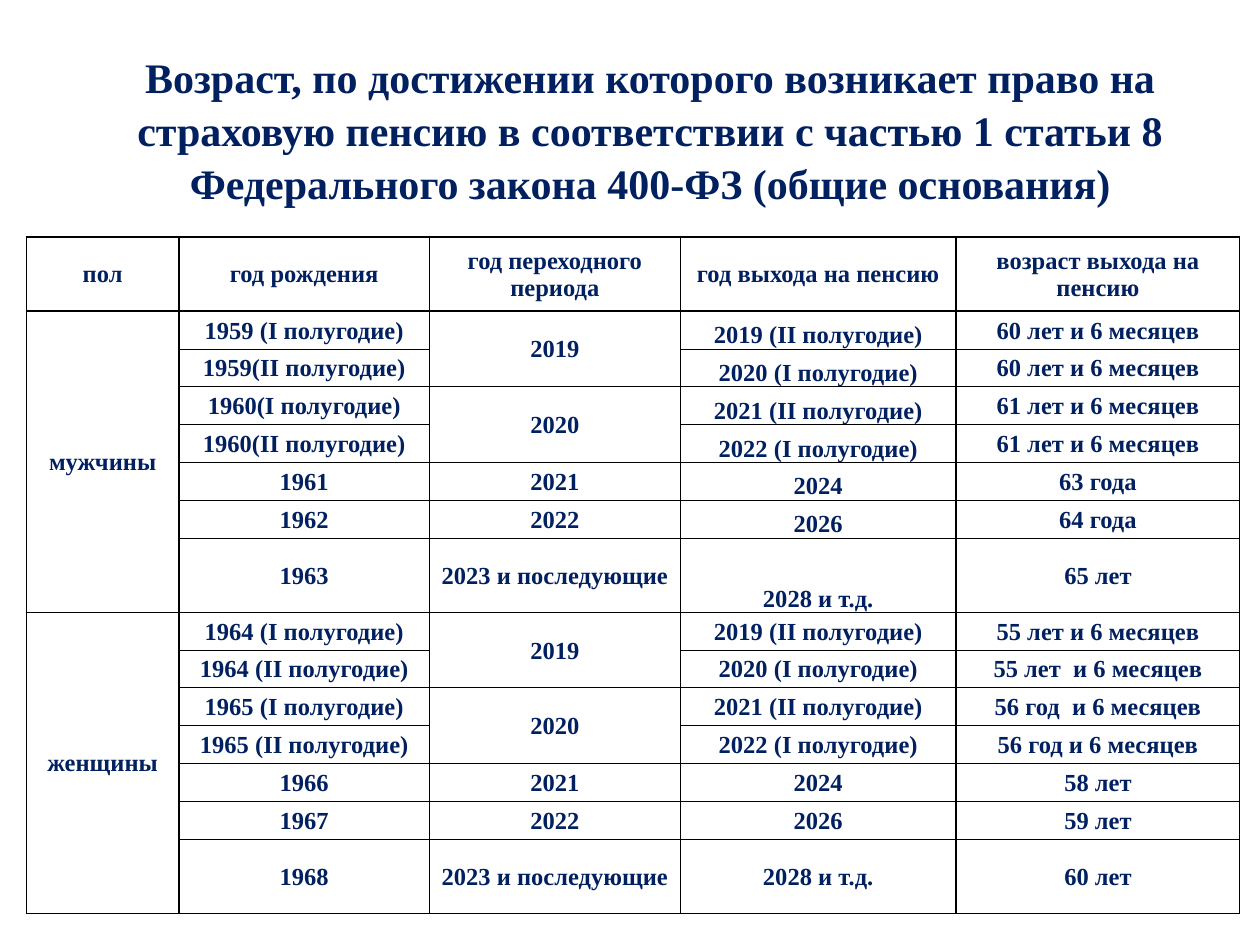
from lxml import etree
from pptx import Presentation
from pptx.dml.color import RGBColor
from pptx.enum import text
from pptx.oxml import ns
from pptx.util import Inches, Pt

# Content
TITLE = ("Возраст, по достижении которого возникает право на страховую пенсию "
         "в соответствии с частью 1 статьи 8 Федерального закона 400-ФЗ (общие основания)")
HEADER = ("пол", "год рождения", "год переходного периода",
          "год выхода на пенсию", "возраст выхода на пенсию")
TRANSITION = ("2019", None, "2020", None, "2021", "2022", "2023 и последующие")
RETIREMENT = ("2019 (II полугодие)", "2020 (I полугодие)", "2021 (II полугодие)",
              "2022 (I полугодие)", "2024", "2026", "2028 и т.д.")
MIDDLE, BOTTOM = text.MSO_ANCHOR.MIDDLE, text.MSO_ANCHOR.BOTTOM
GROUPS = [
    {"sex": "мужчины", "retirement_anchor": BOTTOM,
     "born": ("1959 (I полугодие)", "1959(II полугодие)", "1960(I полугодие)",
              "1960(II полугодие)", "1961", "1962", "1963"),
     "age": ("60 лет и 6 месяцев", "60 лет и 6 месяцев", "61 лет и 6 месяцев",
             "61 лет и 6 месяцев", "63 года", "64 года", "65 лет")},
    {"sex": "женщины", "retirement_anchor": MIDDLE,
     "born": ("1964 (I полугодие)", "1964 (II полугодие)", "1965 (I полугодие)",
              "1965 (II полугодие)", "1966", "1967", "1968"),
     "age": ("55 лет и 6 месяцев", "55 лет  и 6 месяцев", "56 год  и 6 месяцев",
             "56 год и 6 месяцев", "58 лет", "59 лет", "60 лет")},
]
GROUP_ROWS = len(TRANSITION)

# Theme and geometry
THEME = {"font": "Times New Roman", "ink": "002060", "paper": "FFFFFF", "line": "000000",
         "title": 24, "body": 14, "thick": 1, "thin": 0.5}
COLUMNS = (1.21, 1.99, 1.99, 2.19, 2.25)
TALL, SHORT = 0.59, 0.3
ROWS = [TALL] + ([SHORT] * (GROUP_ROWS - 1) + [TALL]) * len(GROUPS)


def write(tf, content, size, spacing=1.0):
    tf.word_wrap = True
    p = tf.paragraphs[0]
    p.alignment = text.PP_ALIGN.CENTER
    p.line_spacing = spacing
    p.space_before = Pt(0)
    r = p.add_run()
    r.text = content
    r.font.name, r.font.size, r.font.bold = THEME["font"], Pt(size), True
    r.font.color.rgb = RGBColor.from_string(THEME["ink"])


def set_borders(cell, top, bottom):
    tc_pr = cell._tc.get_or_add_tcPr()
    sides = {"lnL": THEME["thick"], "lnR": THEME["thick"], "lnT": top, "lnB": bottom}
    for side, width in sides.items():
        ln = etree.SubElement(tc_pr, ns.qn("a:" + side), w=str(Pt(width)))
        fill = etree.SubElement(ln, ns.qn("a:solidFill"))
        etree.SubElement(fill, ns.qn("a:srgbClr"), val=THEME["line"])


def fill_cell(cell, content, thick_top, thick_bottom, anchor=MIDDLE):
    set_borders(cell, *(THEME["thick" if heavy else "thin"]
                        for heavy in (thick_top, thick_bottom)))
    cell.fill.solid()
    cell.fill.fore_color.rgb = RGBColor.from_string(THEME["paper"])
    cell.margin_left = cell.margin_right = cell.margin_top = Inches(0.01)
    cell.margin_bottom = 0
    cell.vertical_anchor = anchor
    if content:
        write(cell.text_frame, content, THEME["body"])


def add_title(slide):
    sp = slide.shapes.title
    sp.left, sp.top, sp.width, sp.height = map(Inches, (0.48, 0.34, 9.36, 1.67))
    tf = sp.text_frame
    tf.auto_size = text.MSO_AUTO_SIZE.NONE
    tf.vertical_anchor = text.MSO_ANCHOR.TOP
    tf.margin_left = tf.margin_right = Inches(0.1)
    tf.margin_top, tf.margin_bottom = Inches(0.05), 0
    write(tf, TITLE, THEME["title"], spacing=1.05)


def add_pension_table(slide):
    table = slide.shapes.add_table(
        len(ROWS), len(COLUMNS), Inches(0.21), Inches(1.88),
        Inches(sum(COLUMNS)), Inches(sum(ROWS))).table
    table.first_row = table.horz_banding = False
    for column, width in zip(table.columns, COLUMNS):
        column.width = Inches(width)
    for row, height in zip(table.rows, ROWS):
        row.height = Inches(height)

    # Header row
    for col, label in enumerate(HEADER):
        fill_cell(table.cell(0, col), label, True, True)

    # One block of rows for each sex
    for g, group in enumerate(GROUPS):
        start = 1 + g * GROUP_ROWS
        columns = (group["born"], TRANSITION, RETIREMENT, group["age"])
        for i, values in enumerate(zip(*columns)):
            row = start + i
            fill_cell(table.cell(row, 0), None if i else group["sex"], True, True)
            for col, value in enumerate(values, 1):
                anchor = group["retirement_anchor"] if col == 3 else MIDDLE
                fill_cell(table.cell(row, col), value, i == 0, i == GROUP_ROWS - 1, anchor)
            if TRANSITION[i] is None:
                table.cell(row - 1, 2).merge(table.cell(row, 2))
        table.cell(start, 0).merge(table.cell(start + GROUP_ROWS - 1, 0))


def main():
    prs = Presentation()
    prs.slide_width, prs.slide_height = Inches(10), Inches(7.5)
    slide = prs.slides.add_slide(prs.slide_layouts[5])
    add_title(slide)
    add_pension_table(slide)
    prs.save("out.pptx")


if __name__ == "__main__":
    main()
